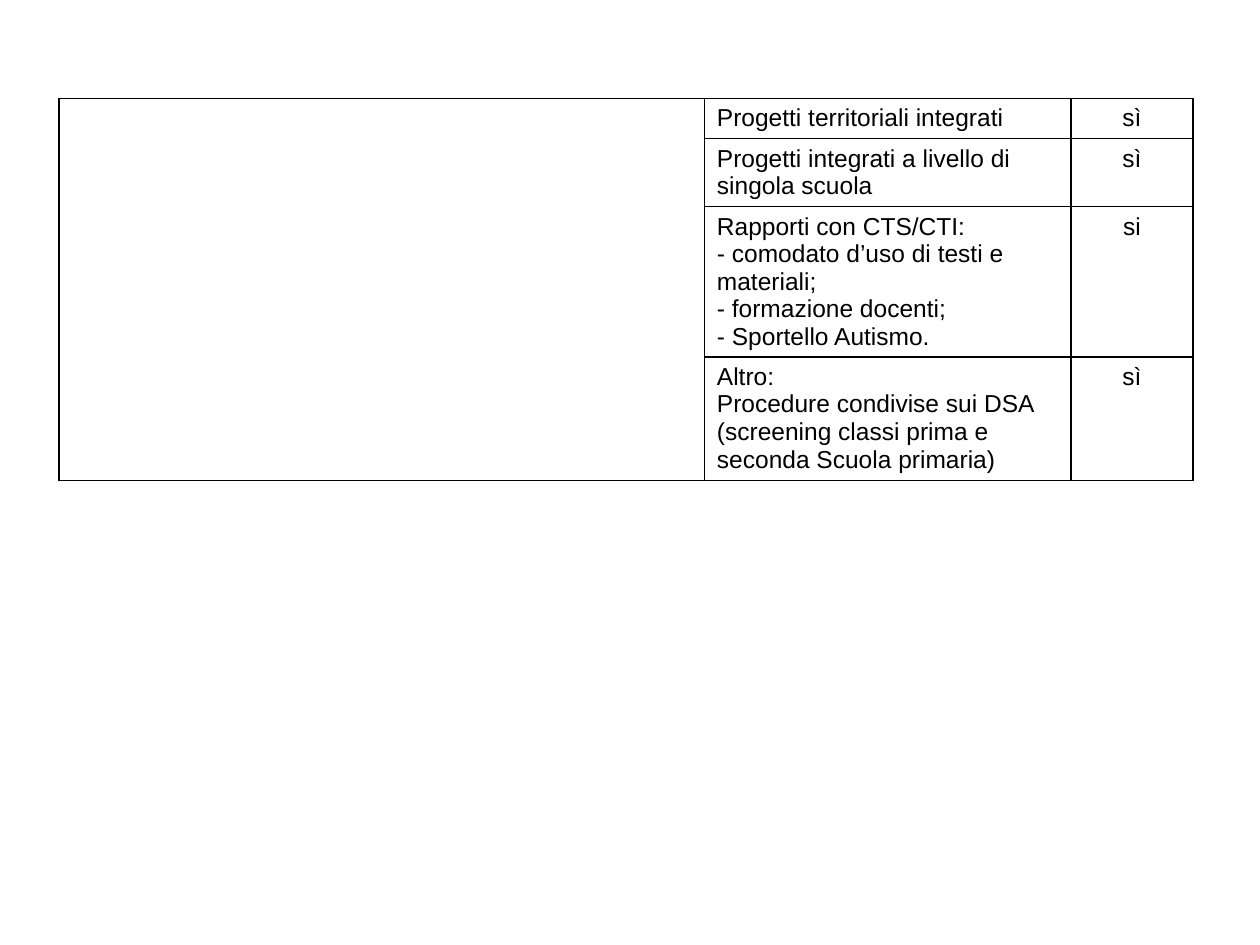
from dataclasses import dataclass

from lxml import etree
from pptx import Presentation
from pptx.dml.color import RGBColor
from pptx.enum.text import PP_ALIGN
from pptx.oxml.ns import qn
from pptx.table import Table, _Cell
from pptx.util import Inches, Pt

LEFT, CENTER = PP_ALIGN.LEFT, PP_ALIGN.CENTER
BLANK_LAYOUT = 6
BORDER_SIDES = ("a:lnL", "a:lnR", "a:lnT", "a:lnB")
COLUMN_WIDTHS = (5.12, 2.91, 0.97)


@dataclass(frozen=True)
class Theme:
    font: str = "Arial"
    text_size: Pt = Pt(14)
    text: RGBColor = RGBColor(0, 0, 0)
    border: str = "000000"
    border_width: Pt = Pt(1)


@dataclass(frozen=True)
class Measure:
    """One support measure, its paragraphs and whether it is in place."""
    lines: tuple[str, ...]
    answer: str
    height: float


THEME = Theme()
MEASURES = (
    Measure(("Progetti territoriali integrati",), "sì", 0.32),
    Measure(("Progetti integrati a livello di singola scuola",), "sì", 0.54),
    Measure(
        (
            "Rapporti con CTS/CTI:",
            "- comodato d’uso di testi e materiali;",
            "- formazione docenti;",
            "- Sportello Autismo.",
        ),
        "si",
        1.19,
    ),
    Measure(
        (
            "Altro:",
            "Procedure condivise sui DSA (screening classi prima e "
            "seconda Scuola primaria)",
        ),
        "sì",
        0.98,
    ),
)


def style_cell(cell: _Cell) -> None:
    """Draw all four borders, then clear the fill, in schema order."""
    properties = cell._tc.get_or_add_tcPr()
    for side in BORDER_SIDES:
        border = etree.SubElement(properties, qn(side), w=str(THEME.border_width))
        fill = etree.SubElement(border, qn("a:solidFill"))
        etree.SubElement(fill, qn("a:srgbClr"), val=THEME.border)
    cell.fill.background()


def write_cell(cell: _Cell, lines: tuple[str, ...], alignment: PP_ALIGN) -> None:
    cell.text = "\n".join(lines)
    font_format = {"name": THEME.font, "size": THEME.text_size, "bold": False}
    for paragraph in cell.text_frame.paragraphs:
        paragraph.alignment = alignment
        for run in paragraph.runs:
            for attribute, value in font_format.items():
                setattr(run.font, attribute, value)
            run.font.color.rgb = THEME.text


def fill_measures(table: Table) -> None:
    for column, width in zip(table.columns, COLUMN_WIDTHS):
        column.width = Inches(width)
    for cell in table.iter_cells():
        style_cell(cell)
    for index, measure in enumerate(MEASURES):
        table.rows[index].height = Inches(measure.height)
        write_cell(table.cell(index, 1), measure.lines, LEFT)
        write_cell(table.cell(index, 2), (measure.answer,), CENTER)
    table.cell(0, 0).merge(table.cell(len(MEASURES) - 1, 0))


def main() -> None:
    presentation = Presentation()
    presentation.slide_width = Inches(10)
    presentation.slide_height = Inches(7.5)
    slide = presentation.slides.add_slide(presentation.slide_layouts[BLANK_LAYOUT])
    measures_table = slide.shapes.add_table(
        len(MEASURES),
        len(COLUMN_WIDTHS),
        Inches(0.47),
        Inches(0.78),
        Inches(sum(COLUMN_WIDTHS)),
        Inches(sum(measure.height for measure in MEASURES)),
    ).table
    measures_table.first_row = False
    measures_table.horz_banding = False
    fill_measures(measures_table)
    presentation.save("out.pptx")


if __name__ == "__main__":
    main()
